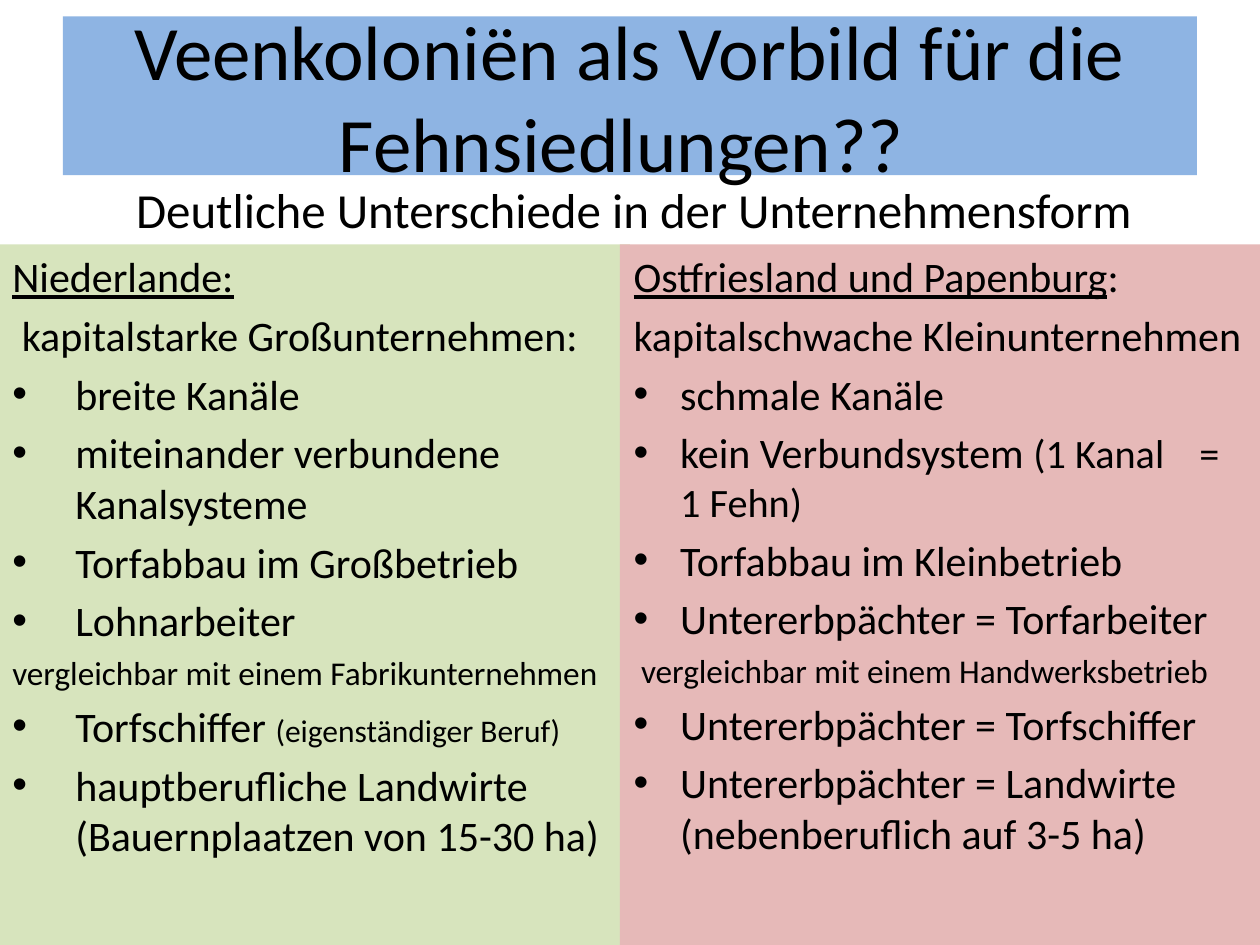
"""Build a slide comparing Dutch and East Frisian peat colonies."""
from dataclasses import dataclass
from typing import Optional

import pptx
import pptx.dml.color
import pptx.enum.shapes
import pptx.enum.text
import pptx.oxml.ns
import pptx.oxml.xmlchemy
import pptx.util
from lxml import etree

Inches = pptx.util.Inches
Pt = pptx.util.Pt
RGBColor = pptx.dml.color.RGBColor
Align = pptx.enum.text.PP_ALIGN
Anchor = pptx.enum.text.MSO_ANCHOR

BLACK = RGBColor(0x00, 0x00, 0x00)
BLUE = RGBColor(0x8E, 0xB4, 0xE3)
GREEN = RGBColor(0xD7, 0xE4, 0xBD)
ROSE = RGBColor(0xE6, 0xB9, 0xB8)
FONT = "Calibri"


@dataclass(frozen=True)
class Span:
    text: str
    size: float = 24
    underline: bool = False


@dataclass(frozen=True)
class Line:
    spans: tuple[Span, ...]
    bullet: bool = False
    before: float = 4.8
    tab: Optional[float] = None


@dataclass(frozen=True)
class Panel:
    left: float
    width: float
    fill: RGBColor
    margin: float
    hanging: float
    lines: tuple[Line, ...]


def plain(text: str) -> Line:
    return Line((Span(text),))


def bullet(text: str) -> Line:
    return Line((Span(text),), bullet=True)


def remark(text: str) -> Line:
    return Line((Span(text, 19),), before=3.8)


PANELS = (
    Panel(0, 5, GREEN, 0.5, 0.5, (
        Line((Span("Niederlande:", underline=True),)),
        plain(" kapitalstarke Großunternehmen:"),
        bullet("breite Kanäle"),
        bullet("miteinander verbundene Kanalsysteme"),
        bullet("Torfabbau im Großbetrieb"),
        bullet("Lohnarbeiter"),
        remark("vergleichbar mit einem Fabrikunternehmen"),
        Line((Span("Torfschiffer "), Span("(eigenständiger Beruf)", 18)), bullet=True),
        bullet("hauptberufliche Landwirte (Bauernplaatzen von 15-30 ha)"),
    )),
    Panel(4.92, 5.08, ROSE, 0.38, 0.37, (
        Line((Span("Ostfriesland und Papenburg", underline=True), Span(":"))),
        plain("kapitalschwache Kleinunternehmen"),
        bullet("schmale Kanäle"),
        Line((Span("kein Verbundsystem "), Span("(1 Kanal\t= 1 Fehn)", 23)),
             bullet=True, tab=4.5),
        bullet("Torfabbau im Kleinbetrieb"),
        bullet("Untererbpächter = Torfarbeiter"),
        remark(" vergleichbar mit einem Handwerksbetrieb"),
        bullet("Untererbpächter = Torfschiffer"),
        bullet("Untererbpächter = Landwirte (nebenberuflich auf 3-5 ha)"),
    )),
)


def add_span(para, span: Span) -> None:
    run = para.add_run()
    run.text = span.text
    run.font.name = FONT
    run.font.size = Pt(span.size)
    run.font.color.rgb = BLACK
    run.font.underline = span.underline


def add_element(parent, tag: str, **attributes: str):
    return etree.SubElement(parent, pptx.oxml.ns.qn(tag), **attributes)


def format_line(para, line: Line, panel: Panel) -> None:
    properties = para._p.get_or_add_pPr()
    properties.set("marL", str(Inches(panel.margin)))
    properties.set("indent", str(-Inches(panel.hanging)))
    if line.bullet:
        colour = add_element(properties, "a:buClr")
        add_element(colour, "a:srgbClr", val=str(BLACK))
        add_element(properties, "a:buFont", typeface="Arial")
        add_element(properties, "a:buChar", char="•")
    else:
        add_element(properties, "a:buNone")
    if line.tab is not None:
        stops = add_element(properties, "a:tabLst")
        add_element(stops, "a:tab", pos=str(Inches(line.tab)), algn="l")
    para.alignment = Align.LEFT


def add_block(page, left: float, top: float, width: float, height: float, fill: RGBColor):
    box = page.shapes.add_shape(
        pptx.enum.shapes.MSO_SHAPE.RECTANGLE,
        Inches(left), Inches(top), Inches(width), Inches(height))
    box.shadow.inherit = False
    box.fill.solid()
    box.fill.fore_color.rgb = fill
    box.line.fill.background()
    return box


def add_heading(box, span: Span, anchor) -> None:
    frame = box.text_frame
    frame.word_wrap = True
    frame.vertical_anchor = anchor
    para = frame.paragraphs[0]
    para.alignment = Align.CENTER
    add_span(para, span)


def add_panel(page, panel: Panel) -> None:
    frame = add_block(page, panel.left, 1.94, panel.width, 5.56, panel.fill).text_frame
    frame.word_wrap = True
    frame.vertical_anchor = Anchor.TOP
    for index, line in enumerate(panel.lines):
        para = frame.add_paragraph() if index else frame.paragraphs[0]
        format_line(para, line, panel)
        if index:
            para.space_before = Pt(line.before)
        for span in line.spans:
            add_span(para, span)


def main() -> None:
    deck = pptx.Presentation()
    deck.slide_width, deck.slide_height = Inches(10), Inches(7.5)
    page = deck.slides.add_slide(deck.slide_layouts[6])
    title = add_block(page, 0.5, 0.13, 9, 1.26, BLUE)
    add_heading(title, Span("Veenkoloniën als Vorbild für die Fehnsiedlungen?? ", 44),
                Anchor.MIDDLE)
    subtitle = page.shapes.add_textbox(Inches(0.5), Inches(1.47), Inches(9.15), Inches(0.47))
    add_heading(subtitle, Span("Deutliche Unterschiede in der Unternehmensform ", 28),
                Anchor.BOTTOM)
    for panel in PANELS:
        add_panel(page, panel)
    deck.save("out.pptx")


if __name__ == "__main__":
    main()
